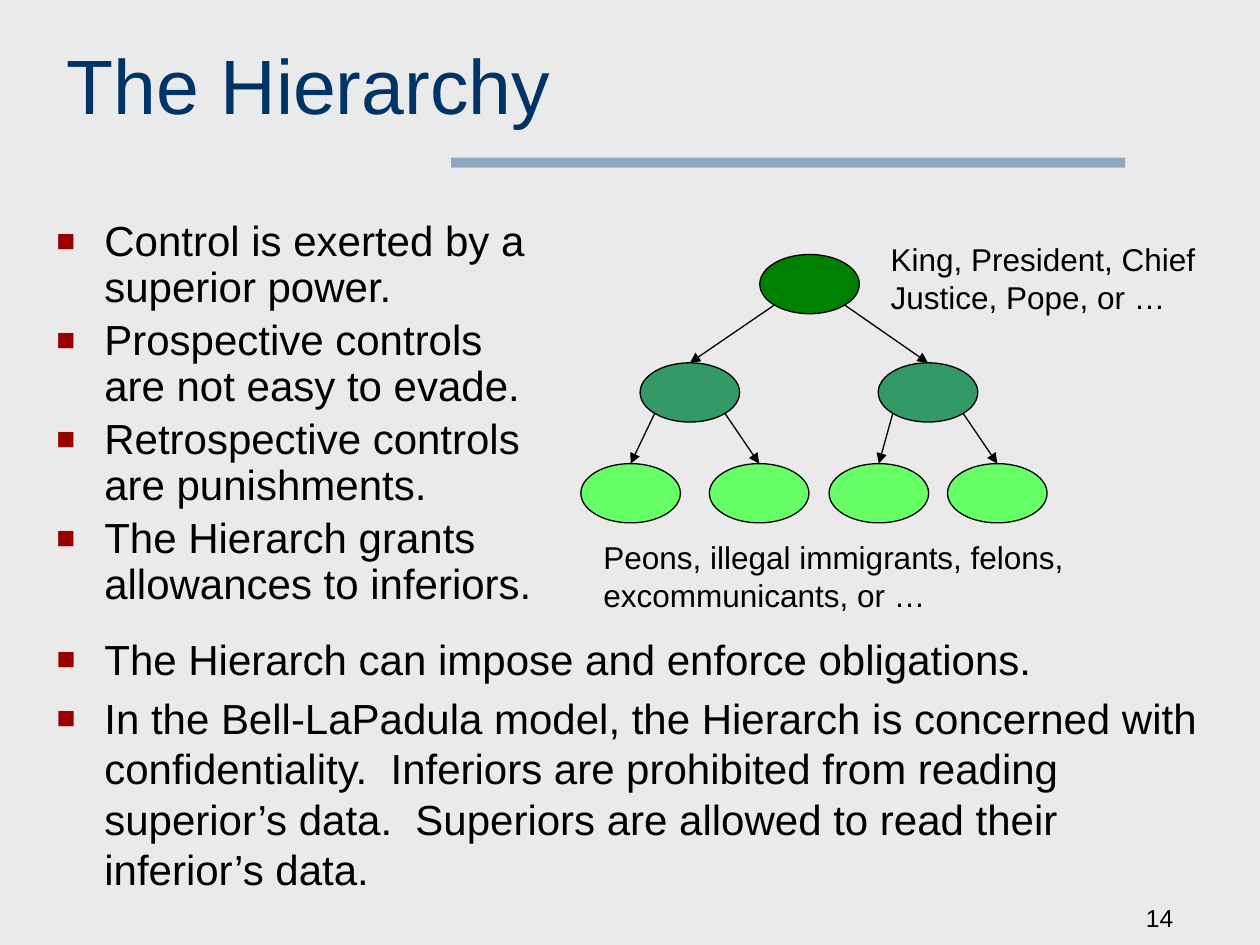
import math

from lxml import etree
from pptx import Presentation
from pptx.dml.color import RGBColor
from pptx.enum.shapes import MSO_CONNECTOR, MSO_SHAPE
from pptx.enum.text import MSO_ANCHOR, PP_ALIGN
from pptx.oxml.ns import qn
from pptx.util import Inches, Pt

STRAIGHT = MSO_CONNECTOR.STRAIGHT
OVAL, RECTANGLE = MSO_SHAPE.OVAL, MSO_SHAPE.RECTANGLE
BOTTOM, RIGHT = MSO_ANCHOR.BOTTOM, PP_ALIGN.RIGHT
TOP_SITE = 0

FONT = "Arial"
COLORS = {
    "background": "EAEAEA",
    "title": "003366",
    "rule": "336699",
    "text": "000000",
    "bullet": "9A0000",
    "hierarch": "008000",
    "middle": "339966",
    "inferior": "66FF66",
}

NODE_WIDTH, NODE_HEIGHT = 0.79, 0.47
# Each level: colour, top, and left edges, relative to the tree's corner
LEVELS = [
    ("hierarch", 0, [1.42]),
    ("middle", 0.86, [0.47, 2.36]),
    ("inferior", 1.66, [0, 1.02, 1.97, 2.91]),
]

CONTROLS = [
    "Control is exerted by a superior power.",
    "Prospective controls are not easy to evade.",
    "Retrospective controls are punishments.",
    "The Hierarch grants allowances to inferiors.",
]
OBLIGATIONS = [
    "The Hierarch can impose and enforce obligations.",
    "In the Bell-LaPadula model, the Hierarch is concerned with "
    "confidentiality.  Inferiors are prohibited from reading superior’s data.  "
    "Superiors are allowed to read their inferior’s data.",
]


def rgb(name):
    return RGBColor.from_string(COLORS[name])


def add_xml(parent, tag, **attributes):
    return etree.SubElement(parent, qn(tag), attributes)


def add_run(paragraph, text, size, color="text"):
    run = paragraph.add_run()
    run.text = text
    run.font.name = FONT
    run.font.size = Pt(size)
    run.font.color.rgb = rgb(color)


def add_frame(slide, box):
    frame = slide.shapes.add_textbox(*map(Inches, box)).text_frame
    frame.word_wrap = True
    return frame


def add_label(slide, box, text, size=18, color="text"):
    frame = add_frame(slide, box)
    add_run(frame.paragraphs[0], text, size, color)
    return frame


def add_bullets(slide, box, points, line_spacing=1.0):
    frame = add_frame(slide, box)
    for index, point in enumerate(points):
        paragraph = frame.add_paragraph() if index else frame.paragraphs[0]
        paragraph.line_spacing = line_spacing
        paragraph.space_before = Pt(4.8)
        properties = paragraph._p.get_or_add_pPr()
        properties.set("marL", str(Inches(0.38)))
        properties.set("indent", str(Inches(-0.38)))
        bullet_color = add_xml(properties, "a:buClr")
        add_xml(bullet_color, "a:srgbClr", val=COLORS["bullet"])
        add_xml(properties, "a:buSzPct", val="75000")
        add_xml(properties, "a:buFont", typeface=FONT)
        add_xml(properties, "a:buChar", char="■")
        add_run(paragraph, point, 24)


def add_filled(slide, preset, box, color):
    shape = slide.shapes.add_shape(preset, *map(Inches, box))
    shape.shadow.inherit = False
    shape.fill.solid()
    shape.fill.fore_color.rgb = rgb(color)
    return shape


def add_rule(slide, box):
    rule = add_filled(slide, RECTANGLE, box, "rule")
    rule.line.fill.background()
    fill_color = rule._element.spPr.find(qn("a:solidFill"))[0]
    add_xml(fill_color, "a:alpha", val="50000")


def add_node(slide, left, top, color):
    node = add_filled(slide, OVAL, (left, top, NODE_WIDTH, NODE_HEIGHT), color)
    node.line.color.rgb = rgb("text")
    node.line.width = Pt(0.75)
    return node


def add_arrow(slide, parent, child, side):
    """Runs from the parent's lower diagonal (side -1 left, 1 right) to the child's top."""
    diagonal = math.sqrt(0.5)
    start_x = int(parent.left + parent.width / 2 * (1 + side * diagonal))
    start_y = int(parent.top + parent.height / 2 * (1 + diagonal))
    arrow = slide.shapes.add_connector(STRAIGHT, start_x, start_y, child.left, child.top)
    arrow.end_connect(child, TOP_SITE)
    arrow.line.color.rgb = rgb("text")
    arrow.line.width = Pt(0.75)
    add_xml(arrow.line._get_or_add_ln(), "a:tailEnd", type="triangle")
    add_xml(arrow._element.spPr, "a:effectLst")


def add_tree(slide, left, top):
    parents = []
    for color, level_top, offsets in LEVELS:
        nodes = [add_node(slide, left + x, top + level_top, color) for x in offsets]
        if parents:
            for index, node in enumerate(nodes):
                add_arrow(slide, parents[index // 2], node, 1 if index % 2 else -1)
        parents = nodes


def add_page_number(slide, box, number):
    frame = add_label(slide, box, number, size=14)
    frame.vertical_anchor = BOTTOM
    frame.paragraphs[0].alignment = RIGHT


def main():
    deck = Presentation()
    deck.slide_width, deck.slide_height = Inches(10), Inches(7.5)
    slide = deck.slides.add_slide(deck.slide_layouts[6])
    slide.background.fill.solid()
    slide.background.fill.fore_color.rgb = rgb("background")

    add_rule(slide, (3.58, 1.25, 5.35, 0.08))
    add_label(slide, (0.43, 0.25, 9.02, 1.19), "The Hierarchy", 44, "title")
    add_bullets(slide, (0.35, 1.7, 4.1, 3.15), CONTROLS, line_spacing=0.9)
    add_tree(slide, 4.61, 2.02)
    add_label(slide, (6.97, 1.86, 2.76, 0.7), "King, President, Chief Justice, Pope, or …")
    add_label(slide, (4.69, 4.22, 4.67, 0.7),
              "Peons, illegal immigrants, felons, excommunicants, or …")
    add_bullets(slide, (0.35, 4.98, 9.41, 2.2), OBLIGATIONS)
    add_page_number(slide, (7.33, 7.14, 2.08, 0.31), "14")
    deck.save("out.pptx")


if __name__ == "__main__":
    main()
